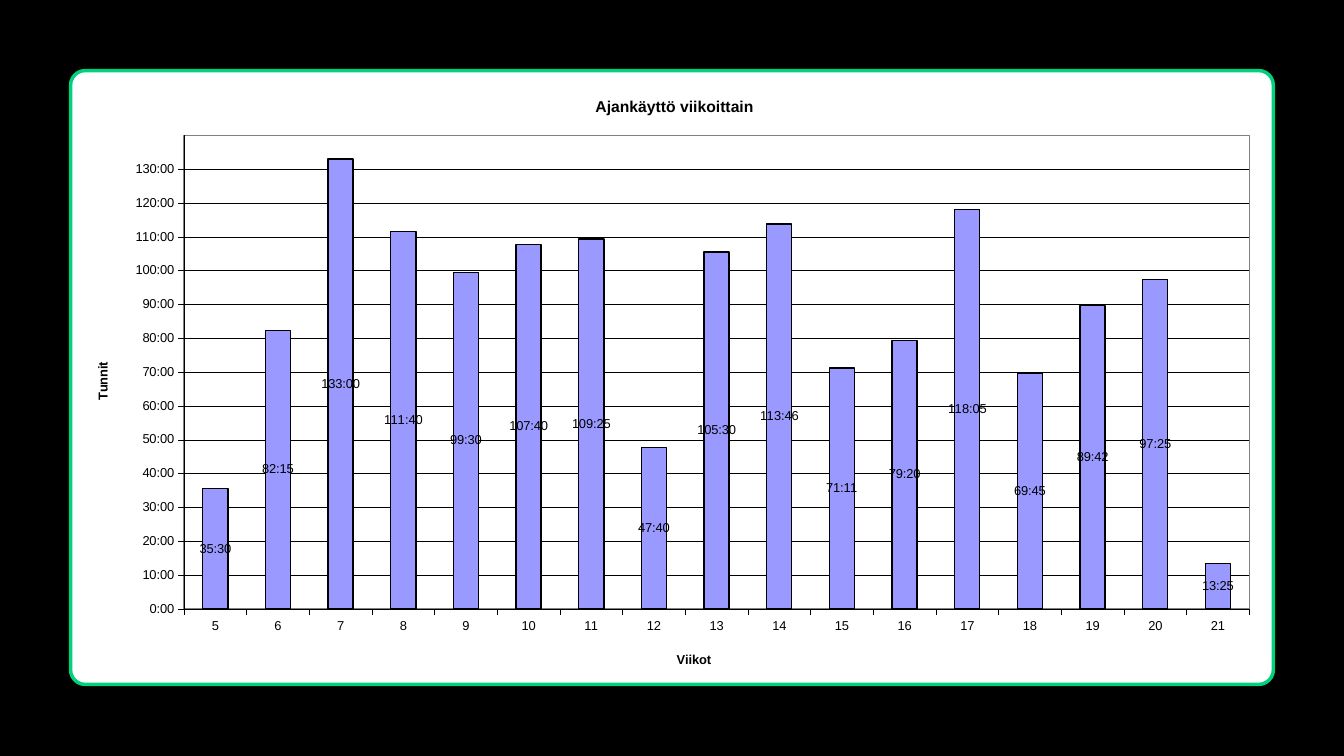
import pptx
import pptx.chart.data
import pptx.dml.color
import pptx.enum.chart
import pptx.enum.shapes
import pptx.oxml
import pptx.oxml.ns
import pptx.util
from pptx.util import Inches

COLORS = {
    "background": "000000",
    "panel": "FFFFFF",
    "frame": "01D17D",
    "ink": "000000",
    "bar": "9999FF",
    "plot_border": "808080",
}
FONT = "Arial"
LABEL_SIZE = 9.2
TITLE_SIZE = 11.2
HOURS_FORMAT = "[h]:mm"
FRAME = (Inches(0.7), Inches(0.7), Inches(11.93), Inches(6.09))
FIRST_WEEK = 5
WEEKLY_HOURS = (
    "35:30 82:15 133:00 111:40 99:30 107:40 109:25 47:40 105:30 "
    "113:46 71:11 79:20 118:05 69:45 89:42 97:25 13:25"
).split()


def rgb(name):
    return pptx.dml.color.RGBColor.from_string(COLORS[name])


def days(clock):
    """Turn h:mm into the fraction of days that the number format expects."""
    hours, minutes = map(int, clock.split(":"))
    return round((hours * 60 + minutes) / 1440, 6)


def style_fill(fill, color):
    fill.solid()
    fill.fore_color.rgb = rgb(color)


def style_line(line, color, width):
    style_fill(line.fill, color)
    line.width = pptx.util.Pt(width)


def style_font(font, size=LABEL_SIZE, bold=False):
    font.name = FONT
    font.size = pptx.util.Pt(size)
    font.bold = bold
    font.color.rgb = rgb("ink")


def place(element, index, **fractions):
    """Give a chart part a manual layout in fractions of the chart area."""
    for old in element.findall(pptx.oxml.ns.qn("c:layout")):
        element.remove(old)
    target = '<c:layoutTarget val="inner"/>' if "w" in fractions else ""
    modes = "".join(f'<c:{key}Mode val="edge"/>' for key in "xy")
    values = "".join(f'<c:{key} val="{value}"/>' for key, value in fractions.items())
    element.insert(index, pptx.oxml.parse_xml(
        f'<c:layout {pptx.oxml.ns.nsdecls("c")}><c:manualLayout>'
        f"{target}{modes}{values}</c:manualLayout></c:layout>"))


def write_title(title, text, x, y, size=LABEL_SIZE, rotation=0):
    frame = title.text_frame
    frame.text = text
    style_font(frame.paragraphs[0].runs[0].font, size=size, bold=True)
    frame._txBody.bodyPr.set("rot", str(rotation * 60000))
    place(title._element, 1, x=x, y=y)


def style_axis(axis):
    axis.major_tick_mark = pptx.enum.chart.XL_TICK_MARK.OUTSIDE
    axis.minor_tick_mark = pptx.enum.chart.XL_TICK_MARK.NONE
    style_font(axis.tick_labels.font)
    style_line(axis.format.line, "ink", 0.25)


def add_panel(slide):
    panel = slide.shapes.add_shape(
        pptx.enum.shapes.MSO_SHAPE.ROUNDED_RECTANGLE, *FRAME)
    panel.adjustments[0] = 0.024
    panel.shadow.inherit = False
    style_fill(panel.fill, "panel")
    style_line(panel.line, "frame", 2.5)


def style_bars(plot):
    plot.gap_width = 150
    plot.overlap = 100
    plot.vary_by_categories = False
    bars = plot.series[0]
    bars.invert_if_negative = False
    style_fill(bars.format.fill, "bar")
    style_line(bars.format.line, "ink", 1)
    labels = bars.data_labels
    labels.show_value = True
    labels.number_format = HOURS_FORMAT
    labels.number_format_is_linked = False
    labels.position = pptx.enum.chart.XL_LABEL_POSITION.CENTER
    style_font(labels.font)


def style_plot_area(chart):
    plot_area = chart._chartSpace.chart.plotArea
    place(plot_area, 0, x=0.0943, y=0.1057, w=0.8857, h=0.7713)
    plot_area.append(pptx.oxml.parse_xml(
        f'<c:spPr {pptx.oxml.ns.nsdecls("c", "a")}><a:noFill/><a:ln w="12700">'
        f'<a:solidFill><a:srgbClr val="{COLORS["plot_border"]}"/></a:solidFill>'
        "</a:ln></c:spPr>"))


def add_hours_chart(slide):
    data = pptx.chart.data.CategoryChartData(number_format=HOURS_FORMAT)
    data.categories = [str(FIRST_WEEK + i) for i in range(len(WEEKLY_HOURS))]
    data.add_series("Tunnit", [days(clock) for clock in WEEKLY_HOURS])
    chart = slide.shapes.add_chart(
        pptx.enum.chart.XL_CHART_TYPE.COLUMN_STACKED, *FRAME, data).chart
    style_font(chart.font)
    chart.has_legend = False

    weeks, hours = chart.category_axis, chart.value_axis
    style_axis(weeks)
    style_axis(hours)
    hours.minimum_scale = 0
    hours.maximum_scale = round(140 / 24, 6)
    hours.major_unit = round(10 / 24, 6)
    hours.tick_labels.number_format = HOURS_FORMAT
    hours.tick_labels.number_format_is_linked = False
    hours.has_major_gridlines = True
    style_line(hours.major_gridlines.format.line, "ink", 0.25)

    write_title(chart.chart_title, "Ajankäyttö viikoittain",
                x=0.434, y=0.037, size=TITLE_SIZE)
    write_title(weeks.axis_title, "Viikot", x=0.502, y=0.942)
    write_title(hours.axis_title, "Tunnit", x=0.018, y=0.471, rotation=-90)
    style_bars(chart.plots[0])
    style_plot_area(chart)


def main():
    deck = pptx.Presentation()
    deck.slide_width = Inches(13.33)
    deck.slide_height = Inches(7.5)
    slide = deck.slides.add_slide(deck.slide_layouts[6])
    style_fill(slide.background.fill, "background")
    add_panel(slide)
    add_hours_chart(slide)
    deck.save("out.pptx")


if __name__ == "__main__":
    main()
